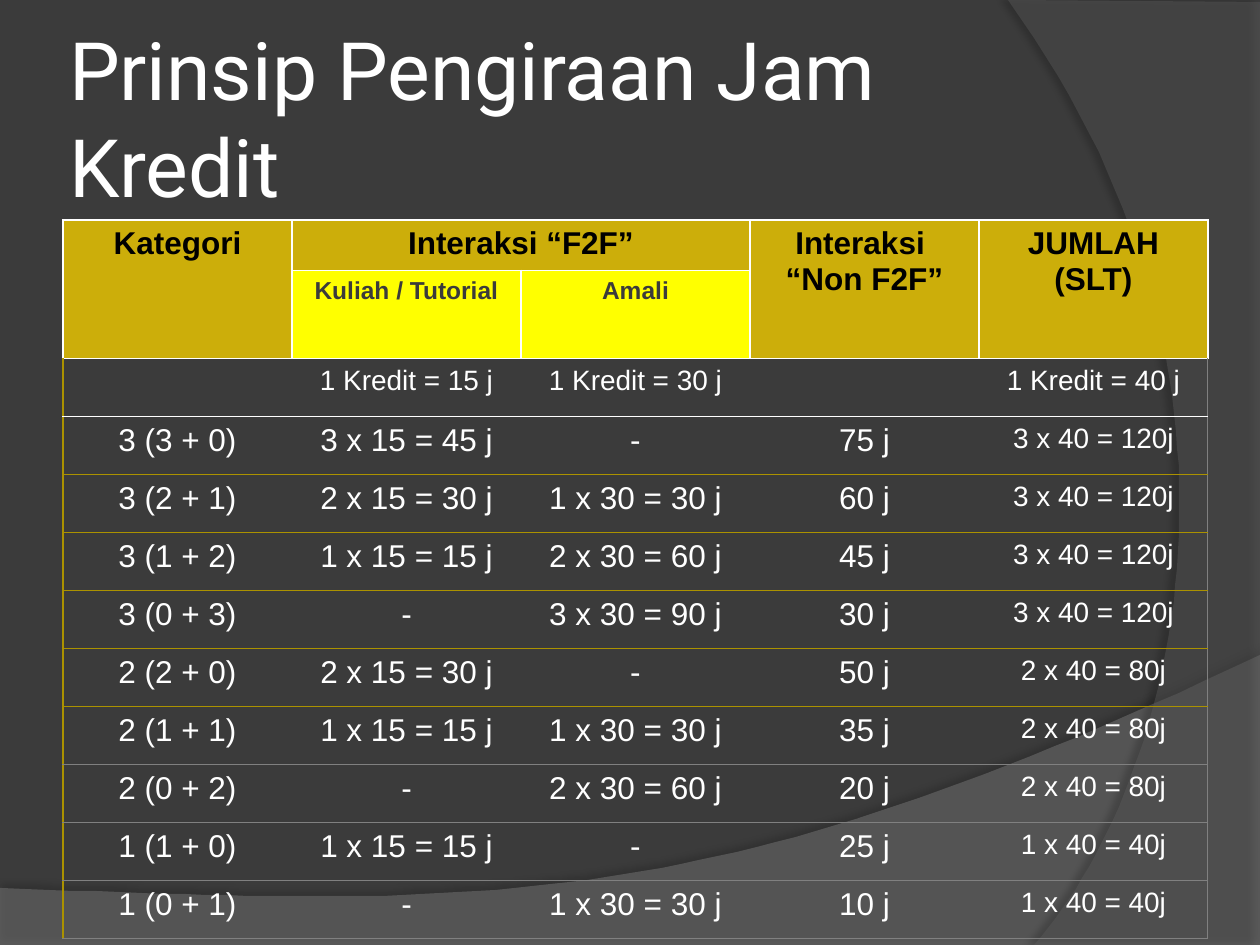
from lxml.etree import SubElement
from pptx import Presentation
from pptx.dml.color import RGBColor
from pptx.enum.text import MSO_ANCHOR, PP_ALIGN
from pptx.oxml.ns import qn
from pptx.util import Pt

SCALE = 7257.14  # EMU in one px, at 126 px to the inch
WHITE, GOLD, GREY = "FFFFFF", "AB9200", "808080"
DARK, HEAD, YELLOW = "3B3B3B", "CCAE0A", "FFFF00"


def px(size):
    return round(size * SCALE)


def color(code):
    return RGBColor.from_string(code)


def tint(parent, code, alpha=None):
    node = SubElement(parent, qn("a:srgbClr"), val=code)
    if alpha:
        SubElement(node, qn("a:alpha"), val=str(alpha * 1000))


def curve(start, one, two, end, steps=60):
    """Points along a cubic curve."""
    points = []
    for i in range(steps + 1):
        t = i / steps
        u = 1 - t
        points.append(tuple(
            round(u**3 * a + 3 * u * u * t * b + 3 * u * t * t * c + t**3 * d)
            for a, b, c, d in zip(start, one, two, end)))
    return points


class Deck:
    def __init__(self, wide, high):
        self.file = Presentation()
        self.file.slide_width, self.file.slide_height = px(wide), px(high)
        self.slide = self.file.slides.add_slide(self.file.slide_layouts[6])
        self.shapes = self.slide.shapes

    def back(self, code):
        fill = self.slide.background.fill
        fill.solid()
        fill.fore_color.rgb = color(code)

    def wave(self, points, code, alpha, shade, dist, angle):
        pen = self.shapes.build_freeform(*points[0], scale=SCALE)
        pen.add_line_segments(points[1:], close=True)
        shape = pen.convert_to_shape()
        shape.fill.solid()
        shape.fill.fore_color.rgb = color(code)
        node = shape.fill._xPr.find(qn("a:solidFill"))[0]
        SubElement(node, qn("a:alpha"), val=str(alpha * 1000))
        shape.line.fill.background()
        shape.shadow.inherit = False
        glow = SubElement(
            shape._element.spPr.find(qn("a:effectLst")), qn("a:outerShdw"),
            blurRad=str(Pt(4)), dist=str(Pt(dist)), dir=str(angle * 60000),
            algn="ctr", rotWithShape="0")
        tint(glow, "000000", shade)

    def style(self, para, size, code, face="Arial", bold=False):
        font = para.font
        font.name, font.size, font.bold = face, Pt(size), bold
        font.color.rgb = color(code)

    def title(self, text, x, y, w, h):
        frame = self.shapes.add_textbox(px(x), px(y), px(w), px(h)).text_frame
        frame.word_wrap = True
        frame.vertical_anchor = MSO_ANCHOR.MIDDLE
        frame.margin_left = frame.margin_right = px(6)
        frame.margin_top = frame.margin_bottom = px(6)
        frame.text = text
        self.style(frame.paragraphs[0], 46, WHITE, "Roboto")

    def table(self, x, y, cols, rows):
        table = self.shapes.add_table(
            len(rows), len(cols), px(x), px(y), px(sum(cols)), px(sum(rows))).table
        table.first_row = table.horz_banding = False
        for col, size in zip(table.columns, cols):
            col.width = px(size)
        for row, size in zip(table.rows, rows):
            row.height = px(size)
        return table

    def cell(self, cell, text, size, code, bold, fill, edges):
        # Borders come before the fill in the cell's XML
        props = cell._tc.get_or_add_tcPr()
        for side in "LRTB":
            edge = edges.get(side)
            line = SubElement(props, qn("a:ln" + side),
                              w=str(Pt(1 if edge == WHITE else 0.75)))
            if edge:
                tint(SubElement(line, qn("a:solidFill")), edge)
            else:
                SubElement(line, qn("a:noFill"))
        if fill:
            cell.fill.solid()
            cell.fill.fore_color.rgb = color(fill)
        else:
            cell.fill.background()
        cell.text_frame.text = text
        for para in cell.text_frame.paragraphs:
            para.alignment = PP_ALIGN.CENTER
            self.style(para, size, code, bold=bold)


HEADS = [
    ["Kategori", "Interaksi “F2F”", "", "Interaksi \n“Non F2F”", "JUMLAH\n(SLT)"],
    ["", "Kuliah / Tutorial", "Amali", "", ""],
]
BODY = [
    ["", "1 Kredit = 15 j", "1 Kredit = 30 j", "", "1 Kredit = 40 j"],
    ["3 (3 + 0)", "3 x 15 = 45 j", "-", "75 j", "3 x 40 = 120j"],
    ["3 (2 + 1)", "2 x 15 = 30 j", "1 x 30 = 30 j", "60 j", "3 x 40 = 120j"],
    ["3 (1 + 2)", "1 x 15 = 15 j", "2 x 30 = 60 j", "45 j", "3 x 40 = 120j"],
    ["3 (0 + 3)", "-", "3 x 30 = 90 j", "30 j", "3 x 40 = 120j"],
    ["2 (2 + 0)", "2 x 15 = 30 j", "-", "50 j", "2 x 40 = 80j"],
    ["2 (1 + 1)", "1 x 15 = 15 j", "1 x 30 = 30 j", "35 j", "2 x 40 = 80j"],
    ["2 (0 + 2)", "-", "2 x 30 = 60 j", "20 j", "2 x 40 = 80j"],
    ["1 (1 + 0)", "1 x 15 = 15 j", "-", "25 j", "1 x 40 = 40j"],
    ["1 (0 + 1)", "-", "1 x 30 = 30 j", "10 j", "1 x 40 = 40j"],
]
# Rule colours from the foot of the header to the foot of the table
RULES = [WHITE] * 2 + [GOLD] * 5 + [GREY] * 4


def main():
    deck = Deck(1260, 945)

    # Background waves
    deck.back(DARK)
    low = curve((1260, 655), (704, 919), (493, 906), (0, 888))
    deck.wave(low + [(0, 945), (1260, 945)], "7F7F7F", 45, 35, 3.5, 270)
    side = curve((1034, 945), (1178, 780), (1283, 378), (1008, 0))
    deck.wave(side + [(1260, 2), (1260, 945)], "5E5E5E", 40, 45, 4, 180)

    deck.title("Prinsip Pengiraan Jam Kredit", 63, 38, 1029, 158)

    # Table header
    table = deck.table(63, 220, [229] * 5, [50, 84] + [58] * len(BODY))
    frame = dict.fromkeys("LRTB", WHITE)
    for r, row in enumerate(HEADS):
        for c, text in enumerate(row):
            sub = r == 1 and c in (1, 2)
            deck.cell(table.cell(r, c), text, 14 if sub else 18,
                      DARK if sub else "000000", True,
                      YELLOW if sub else HEAD, frame)
    for c in (0, 3, 4):
        table.cell(0, c).merge(table.cell(1, c))
    table.cell(0, 1).merge(table.cell(0, 2))

    # Table body
    last = len(HEADS[0]) - 1
    for r, row in enumerate(BODY):
        for c, text in enumerate(row):
            edges = {"T": RULES[r], "B": RULES[r + 1]}
            if c == 0:
                edges["L"] = GOLD
            if c == last:
                edges["R"] = GREY
            size = 16 if r == 0 or c == last else 18
            deck.cell(table.cell(r + len(HEADS), c), text, size, WHITE,
                      False, None, edges)

    deck.file.save("out.pptx")


if __name__ == "__main__":
    main()
